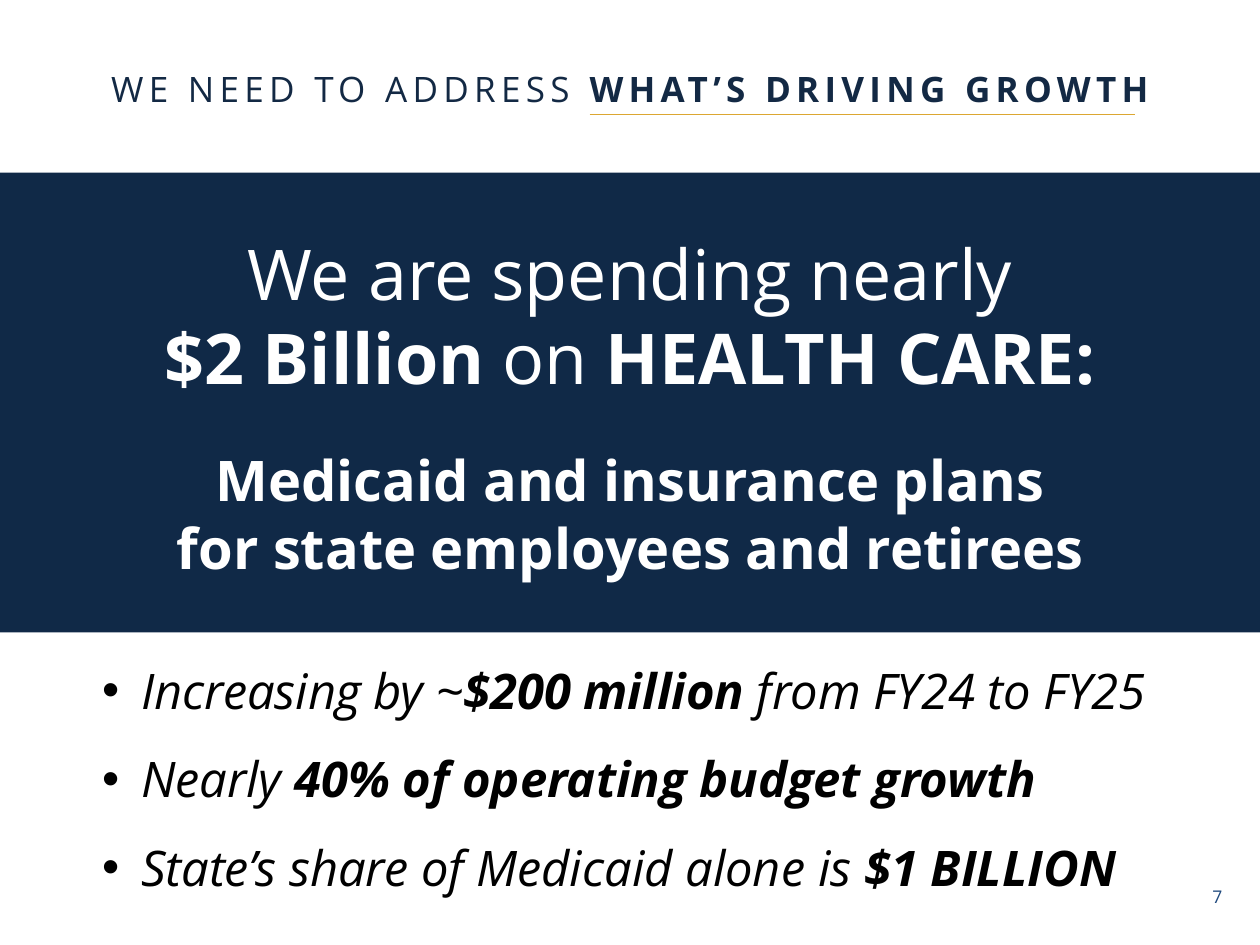
"""Build the health care spending slide."""
from lxml import etree
from pptx import Presentation
from pptx import util as u
from pptx.dml import color
from pptx.enum import shapes, text
from pptx.oxml import ns

THEME = {
    "font": "Open Sans",
    "navy": "102947", "gold": "DCA732", "ink": "132944",
    "white": "FFFFFF", "black": "000000", "blue": "1F497D",
    "title": 20, "headline": 40, "plans": 32, "bullets": 28, "number": 10,
}
WIDTH, HEIGHT = u.Inches(10), u.Inches(7.5)
BAND = (0, 18.27, 100, 48.67)
RULE = (46.8, 12.13, 90.1, 12.13)
INDENT = u.Inches(0.31)

BLOCKS = {
    "title": {
        "at": (0, 6, 100, 6.67), "color": "ink", "placeholder": 0, "tracking": 300,
        "anchor": text.MSO_ANCHOR.MIDDLE,
        "lines": [[("WE NEED TO ADDRESS ", False), ("WHAT’S DRIVING GROWTH", True)]],
    },
    "headline": {
        "at": (9.9, 23.73, 80.2, 19.33), "color": "white",
        "lines": [
            [("We are spending nearly", False)],
            [("$2 Billion ", True), ("on", False), (" HEALTH CARE:", True)],
        ],
    },
    "plans": {
        "at": (12.7, 46.53, 74.7, 15.73), "color": "white",
        "lines": [
            [("Medicaid and insurance plans", True)],
            [("for state employees and retirees", True)],
        ],
    },
    "bullets": {
        "at": (7.1, 66.13, 92.9, 28.67), "color": "black", "placeholder": 1,
        "italic": True, "bulleted": True,
        "align": text.PP_ALIGN.LEFT, "spacing": 1.5,
        "lines": [
            [("Increasing by ~", False), ("$200 million ", True), ("from FY24 to FY25", False)],
            [("Nearly ", False), ("40% of operating budget growth", True)],
            [("State’s share of Medicaid alone is ", False), ("$1 BILLION", True)],
        ],
    },
    "number": {
        "at": (76.7, 93.07, 21.3, 7.6), "color": "blue", "align": text.PP_ALIGN.RIGHT,
        "lines": [[("7", False)]],
    },
}


def rgb(name):
    """Return a theme colour."""
    return color.RGBColor.from_string(THEME[name])


def place(shares):
    """Turn percentages of the slide into lengths."""
    return [round(share * side / 100) for share, side in zip(shares, (WIDTH, HEIGHT) * 2)]


def apply(target, values):
    """Set each attribute in a dict of format values."""
    for name, value in values.items():
        setattr(target, name, value)


def add_band(slide):
    """Draw the navy band."""
    band = slide.shapes.add_shape(shapes.MSO_SHAPE.RECTANGLE, *place(BAND))
    band.shadow.inherit = False
    band.fill.solid()
    band.fill.fore_color.rgb = rgb("navy")
    band.line.fill.background()


def add_rule(slide):
    """Draw the gold rule under the title."""
    rule = slide.shapes.add_connector(shapes.MSO_CONNECTOR.STRAIGHT, *place(RULE))
    rule.line.color.rgb = rgb("gold")
    rule.line.width = u.Pt(1)
    etree.SubElement(rule._element.spPr, ns.qn("a:effectLst"))


def add_bullet(paragraph):
    """Give a paragraph a hanging bullet."""
    properties = paragraph._p.get_or_add_pPr()
    properties.set("marL", str(INDENT))
    properties.set("indent", str(-INDENT))
    etree.SubElement(properties, ns.qn("a:buFont"), typeface="Arial")
    etree.SubElement(properties, ns.qn("a:buChar"), char="•")


def add_block(slide, name, block):
    """Write one block of text."""
    box = place(block["at"])
    if "placeholder" in block:
        shape = slide.placeholders[block["placeholder"]]
        apply(shape, dict(zip(("left", "top", "width", "height"), box)))
    else:
        shape = slide.shapes.add_textbox(*box)
    frame = shape.text_frame
    apply(frame, {
        "word_wrap": True,
        "auto_size": text.MSO_AUTO_SIZE.NONE,
        "vertical_anchor": block.get("anchor", text.MSO_ANCHOR.TOP),
    })
    for index, line in enumerate(block["lines"]):
        paragraph = frame.add_paragraph() if index else frame.paragraphs[0]
        apply(paragraph, {
            "alignment": block.get("align", text.PP_ALIGN.CENTER),
            "line_spacing": block.get("spacing", 1.0),
            "space_before": u.Pt(0),
        })
        if block.get("bulleted"):
            add_bullet(paragraph)
        for words, bold in line:
            run = paragraph.add_run()
            run.text = words
            apply(run.font, {
                "name": THEME["font"], "size": u.Pt(THEME[name]),
                "bold": bold, "italic": block.get("italic", False),
            })
            run.font.color.rgb = rgb(block["color"])
            if "tracking" in block:
                run.font._element.set("spc", str(block["tracking"]))


def main():
    """Assemble and save the presentation."""
    presentation = Presentation()
    apply(presentation, {"slide_width": WIDTH, "slide_height": HEIGHT})
    slide = presentation.slides.add_slide(presentation.slide_layouts[1])
    add_band(slide)
    add_rule(slide)
    for name, block in BLOCKS.items():
        add_block(slide, name, block)
    presentation.save("out.pptx")


if __name__ == "__main__":
    main()
